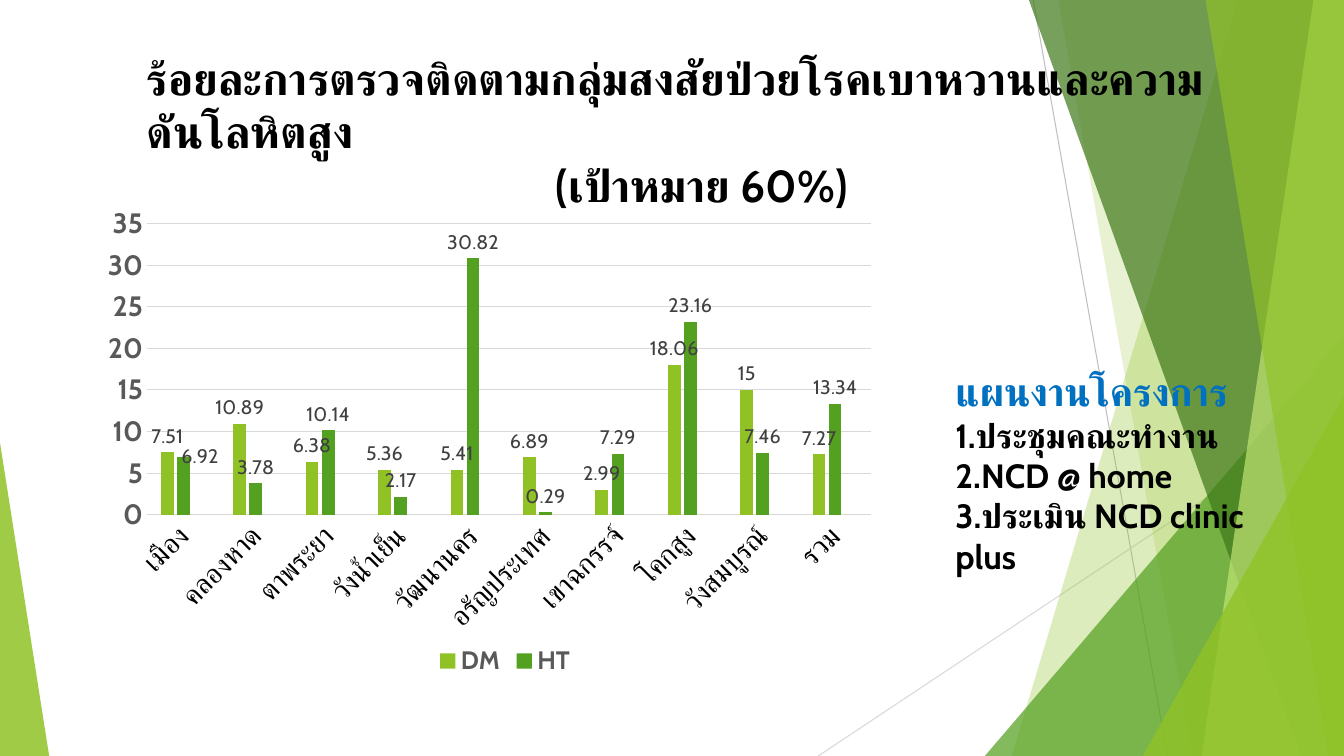
"""Builds a slide on follow-up screening for diabetes and hypertension."""
from dataclasses import dataclass

from lxml import etree
from pptx import Presentation
from pptx.chart.data import CategoryChartData
from pptx.dml.color import RGBColor
from pptx.enum.chart import XL_CHART_TYPE, XL_LABEL_POSITION, XL_LEGEND_POSITION, XL_TICK_MARK
from pptx.enum.shapes import MSO_CONNECTOR, MSO_SHAPE
from pptx.enum.text import MSO_ANCHOR, MSO_AUTO_SIZE, PP_ALIGN
from pptx.oxml import parse_xml
from pptx.oxml.ns import nsdecls, qn
from pptx.util import Cm, Pt

COLUMN = XL_CHART_TYPE.COLUMN_CLUSTERED
OUTSIDE_END = XL_LABEL_POSITION.OUTSIDE_END
BOTTOM = XL_LEGEND_POSITION.BOTTOM
NO_TICK = XL_TICK_MARK.NONE
STRAIGHT = MSO_CONNECTOR.STRAIGHT
TRIANGLE = MSO_SHAPE.ISOSCELES_TRIANGLE
TOP = MSO_ANCHOR.TOP
NO_FIT = MSO_AUTO_SIZE.NONE
LEFT = PP_ALIGN.LEFT

TITLE = ["ร้อยละการตรวจติดตามกลุ่มสงสัยป่วยโรคเบาหวานและความดันโลหิตสูง", "(เป้าหมาย 60%)"]
PLAN = ["แผนงานโครงการ", "1.ประชุมคณะทำงาน", "2.NCD @ home", "3.ประเมิน NCD clinic plus"]
DISTRICTS = ["เมือง", "คลองหาด", "ตาพระยา", "วังน้ำเย็น", "วัฒนานคร",
             "อรัญประเทศ", "เขาฉกรรจ์", "โคกสูง", "วังสมบูรณ์", "รวม"]
RATES = {
    "DM": [7.51, 10.89, 6.38, 5.36, 5.41, 6.89, 2.99, 18.06, 15, 7.27],
    "HT": [6.92, 3.78, 10.14, 2.17, 30.82, 0.29, 7.29, 23.16, 7.46, 13.34],
    "Series 3": [None] * len(DISTRICTS),
}


@dataclass(frozen=True)
class Theme:
    """Colours, type sizes and font."""
    font: str = "Cabin"
    black: str = "000000"
    blue: str = "0070C0"
    axis: str = "595959"
    label: str = "404040"
    grid: str = "D9D9D9"
    ray: str = "BFBFBF"
    lime: str = "90C226"
    green: str = "54A021"
    forest: str = "3F7819"
    pale: str = "C0E474"
    gold: str = "E6B91E"
    title_size: int = 32
    heading_size: int = 28
    body_size: int = 24
    axis_size: int = 20
    legend_size: int = 18
    label_size: int = 14
    base_size: int = 10
    hairline: float = 0.75


T = Theme()
WIDTH, HEIGHT = 33.87, 19.05
RAYS = [((26.04, 0), (29.42, HEIGHT), T.ray), ((WIDTH, 10.24), (20.62, HEIGHT), T.grid)]
# fmt: off
FACETS = [
    ("band", (31.19, 25.5), T.lime, 30),
    ("band", (26.67, 30.05), T.lime, 20),
    ("triangle", (24.82, 8.46, WIDTH, 1), T.green, 72),
    ("band", (25.93, 32.79), T.forest, 70),
    ("band", (33.1, 30.28), T.pale, 70),
    ("band", (30.38, 33.48), T.lime, 65),
    ("triangle", (28.8, 9.98, WIDTH, 1), T.lime, 80),
    ("triangle", (0, 11.15, 1.24, 0), T.lime, 85),
]
TITLE_BOX = (3.45, 1.14, 27.71, 3.66)
TARGET_INDENT = 10.3
CHART_BOX = (2.24, 4.06, 20.98, 13.11)
PLAN_BOX = (23.83, 9.14, 9.4, 5.56)
PLOT = {"x": 0.07, "y": 0.12, "w": 0.87, "h": 0.56}
LABEL_SHIFT = {"x": 0.02, "y": 0.03}


def rgb(code):
    return RGBColor.from_string(code)


def style(font, size, color, bold=False):
    font.name, font.size, font.bold = T.font, Pt(size), bold
    font.color.rgb = rgb(color)


def use_font_for_thai(element):
    for latin in list(element.iter(qn("a:latin"))):
        latin.addnext(parse_xml(f'<a:cs {nsdecls("a")} typeface="{T.font}"/>'))


def write(tf, lines, sizes, colors):
    tf.text = "\n".join(lines)
    tf.word_wrap, tf.auto_size, tf.vertical_anchor = True, NO_FIT, TOP
    for p, size, color in zip(tf.paragraphs, sizes, colors):
        p.alignment = LEFT
        for r in p.runs:
            style(r.font, size, color, True)


def draw_ray(s, start, end, color):
    line = s.shapes.add_connector(STRAIGHT, *map(Cm, start + end))
    line.line.color.rgb, line.line.width = rgb(color), Pt(T.hairline)
    etree.SubElement(line.element.spPr, qn("a:effectLst"))


def draw_facet(s, kind, geometry, color, opacity):
    if kind == "band":
        top, bottom = geometry
        outline = s.shapes.build_freeform(Cm(top), 0)
        corners = [(WIDTH, 0), (WIDTH, HEIGHT), (bottom, HEIGHT)]
        outline.add_line_segments([(Cm(x), Cm(y)) for x, y in corners])
        sp = outline.convert_to_shape()
    else:
        left, top, right, apex = geometry
        sp = s.shapes.add_shape(TRIANGLE, Cm(left), Cm(top), Cm(right - left), Cm(HEIGHT - top))
        sp.adjustments[0] = apex
    sp.shadow.inherit = False
    sp.line.fill.background()
    sp.fill.solid()
    sp.fill.fore_color.rgb = rgb(color)
    fill = sp.element.spPr.find(qn("a:solidFill"))
    etree.SubElement(fill[0], qn("a:alpha"), val=str(opacity * 1000))


def manual_layout(values, inner=False):
    target = '<c:layoutTarget val="inner"/>' if inner else ""
    modes = '<c:xMode val="edge"/><c:yMode val="edge"/>' if inner else ""
    places = "".join(f'<c:{k} val="{v}"/>' for k, v in values.items())
    return parse_xml(f'<c:layout {nsdecls("c")}><c:manualLayout>{target}{modes}{places}'
                     '</c:manualLayout></c:layout>')


def format_axes(chart):
    cat, val = chart.category_axis, chart.value_axis
    style(cat.tick_labels.font, T.axis_size, T.black)
    style(val.tick_labels.font, T.axis_size, T.axis, True)
    for axis in (cat, val):
        axis.major_tick_mark = axis.minor_tick_mark = NO_TICK
    val.minimum_scale, val.maximum_scale, val.major_unit = 0, 35, 5
    val.format.line.fill.background()
    for line in (cat.format.line, val.major_gridlines.format.line):
        line.color.rgb, line.width = rgb(T.grid), Pt(T.hairline)
    chart.element.xpath(".//c:catAx/c:txPr/a:bodyPr")[0].set("rot", "-2700000")


def format_series(plot):
    plot.gap_width, plot.overlap, plot.vary_by_categories = 219, -27, False
    for series, color in zip(plot.series, (T.lime, T.green, T.gold)):
        series.format.fill.solid()
        series.format.fill.fore_color.rgb = rgb(color)
    for series in list(plot.series)[:2]:
        labels = series.data_labels
        labels.show_value, labels.position = True, OUTSIDE_END
        style(labels.font, T.label_size, T.label)
    first = plot.series[1].points[0].data_label
    first.position = OUTSIDE_END
    style(first.font, T.label_size, T.label)


def add_rate_chart(s):
    data = CategoryChartData()
    data.categories = DISTRICTS
    for name, values in RATES.items():
        data.add_series(name, values)
    chart = s.shapes.add_chart(COLUMN, *map(Cm, CHART_BOX), data).chart
    style(chart.font, T.base_size, T.black)
    chart.has_title = False
    format_axes(chart)
    format_series(chart.plots[0])
    chart.has_legend = True
    chart.legend.position, chart.legend.include_in_layout = BOTTOM, False
    style(chart.legend.font, T.legend_size, T.axis, True)
    root = chart.element
    root.xpath(".//c:legendPos")[0].addnext(parse_xml(
        f'<c:legendEntry {nsdecls("c")}><c:idx val="2"/><c:delete val="1"/></c:legendEntry>'))
    for layout in root.xpath(".//c:plotArea/c:layout"):
        layout.getparent().remove(layout)
    root.xpath(".//c:plotArea")[0].insert(0, manual_layout(PLOT, inner=True))
    root.xpath(".//c:dLbl/c:idx")[0].addnext(manual_layout(LABEL_SHIFT))
    use_font_for_thai(root)


def main():
    prs = Presentation()
    prs.slide_width, prs.slide_height = Cm(WIDTH), Cm(HEIGHT)
    s = prs.slides.add_slide(prs.slide_layouts[5])
    for ray in RAYS:
        draw_ray(s, *ray)
    for facet in FACETS:
        draw_facet(s, *facet)
    title = s.shapes.title
    title.left, title.top, title.width, title.height = map(Cm, TITLE_BOX)
    write(title.text_frame, TITLE, [T.title_size] * 2, [T.black] * 2)
    indent = title.text_frame.paragraphs[1]
    indent.space_before = Pt(0)
    indent.alignment = LEFT
    indent._p.get_or_add_pPr().set("marL", str(Cm(TARGET_INDENT)))
    s.shapes.element.append(title.element)
    add_rate_chart(s)
    plan = s.shapes.add_textbox(*map(Cm, PLAN_BOX))
    write(plan.text_frame, PLAN, [T.heading_size] + [T.body_size] * 3, [T.blue] + [T.black] * 3)
    use_font_for_thai(s.shapes.element)
    prs.save("out.pptx")


if __name__ == "__main__":
    main()
